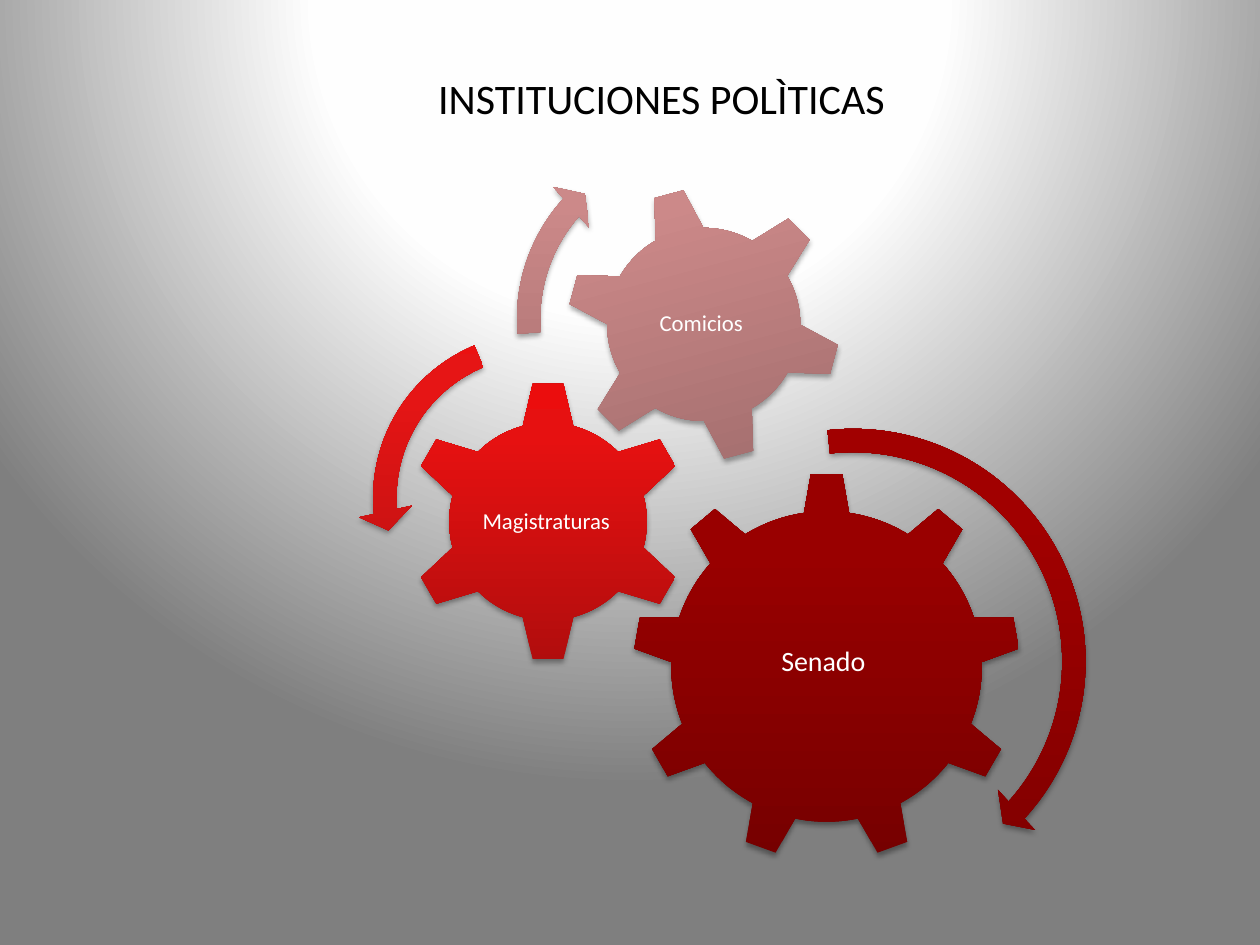
from lxml import etree
from pptx import Presentation, util as u
from pptx.dml.color import RGBColor
from pptx.enum import shapes, text
from pptx.oxml.ns import qn

MSO = shapes.MSO_SHAPE
FONT = "Calibri"

# Gear: preset, box, rotation, gradient from bottom to top, label, label box, text size
GEARS = [
    (MSO.GEAR_9, (5.02, 3.75, 3.08, 3.08), 0, ("760000", "990000", "9A0000"),
     "Senado ", (5.64, 4.47, 1.84, 1.58), 16),
    (MSO.GEAR_6, (3.23, 3.02, 2.24, 2.24), 0, ("B10D0D", "E61111", "EB0D0D"),
     "Magistraturas ", (3.8, 3.59, 1.11, 1.1), 13),
    (MSO.GEAR_6, (4.49, 1.48, 2.19, 2.19), 345, ("9D6A6A", "CC8989", "CE8989"),
     "Comicios ", (4.97, 1.96, 1.23, 1.23), 13),
]

# Turning arrow: preset, left, top, side, gradient, adjustments
ARROWS = [
    (MSO.CIRCULAR_ARROW, 4.8, 3.28, 3.94, ("7C0000", "A10000", "A20000"),
     (0.047, 2.99, 25.345, 158.224, 0.055)),
    (MSO.LEFT_CIRCULAR_ARROW, 2.84, 2.52, 2.86, ("B11010", "E61515", "EB1111"),
     (0.065, 4.3, 104.891, 148.378, 0.075)),
    (MSO.CIRCULAR_ARROW, 3.98, 0.99, 3.08, ("9D6969", "CC8989", "CE8888"),
     (0.06, 3.941, 133.138, 105.082, 0.07)),
]


def add_xml(parent, tag, **attrs):
    child = etree.SubElement(parent, qn(tag))
    for name, value in attrs.items():
        child.set(name, str(value))
    return child


def set_gradient(owner, fill, stops):
    """Fill with (percent, colour) stops and return the emptied gradient element."""
    fill.gradient()
    grad = owner.find(".//" + qn("a:gradFill"))
    for child in list(grad):
        grad.remove(child)
    stop_list = add_xml(grad, "a:gsLst")
    for percent, colour in stops:
        stop = add_xml(stop_list, "a:gs", pos=percent * 1000)
        add_xml(stop, "a:srgbClr", val=colour)
    return grad


def set_background(slide):
    grad = set_gradient(slide._element, slide.background.fill,
                        [(0, "FFFFFF"), (40, "FEFEFE"), (100, "7F7F7F")])
    circle = add_xml(grad, "a:path", path="circle")
    add_xml(circle, "a:fillToRect", l=50000, t=-80000, r=50000, b=180000)


def set_text(sp, words, size, colour, **frame):
    tf = sp.text_frame
    settings = {"word_wrap": True, "vertical_anchor": text.MSO_ANCHOR.MIDDLE, **frame}
    for name, value in settings.items():
        setattr(tf, name, value)
    p = tf.paragraphs[0]
    p.alignment = text.PP_ALIGN.CENTER
    r = p.add_run()
    r.text = words
    for name, value in {"name": FONT, "size": u.Pt(size)}.items():
        setattr(r.font, name, value)
    r.font.color.rgb = RGBColor.from_string(colour)
    return p


def add_part(slide, preset, box, colours):
    """Add a shape with a vertical gradient and a soft shadow below it."""
    sp = slide.shapes.add_shape(preset, *map(u.Inches, box))
    grad = set_gradient(sp._element, sp.fill, zip((0, 80, 100), colours))
    add_xml(grad, "a:lin", ang=270 * 60000, scaled=0)
    sp.line.fill.background()
    sp.shadow.inherit = False
    effects = sp._element.spPr.find(qn("a:effectLst"))
    shadow = add_xml(effects, "a:outerShdw", blurRad=u.Pt(3.1), dist=u.Pt(1.8),
                     dir=90 * 60000, rotWithShape=0)
    add_xml(add_xml(shadow, "a:srgbClr", val="000000"), "a:alpha", val=35000)
    return sp


def add_gear(slide, preset, box, rotation, colours, label, label_box, size):
    add_part(slide, preset, box, colours).rotation = rotation
    sp = slide.shapes.add_textbox(*map(u.Inches, label_box))
    sides = ("left", "right", "top", "bottom")
    margins = {f"margin_{side}": u.Inches(0.02) for side in sides}
    set_text(sp, label, size, "FFFFFF", **margins).line_spacing = 0.9


def add_arrow(slide, preset, left, top, side, colours, adjustments):
    sp = add_part(slide, preset, (left, top, side, side), colours)
    for i, value in enumerate(adjustments):
        sp.adjustments[i] = value


def main():
    prs = Presentation()
    prs.slide_width, prs.slide_height = u.Inches(10), u.Inches(7.5)
    slide = prs.slides.add_slide(prs.slide_layouts[5])
    set_background(slide)

    # Title
    title = slide.shapes.title
    for name, value in zip(("left", "top", "width", "height"), (1, 0.3, 8.5, 0.95)):
        setattr(title, name, u.Inches(value))
    set_text(title, "INSTITUCIONES POLÌTICAS", 24, "000000")

    # Gears, then the arrows around them
    for gear in GEARS:
        add_gear(slide, *gear)
    for arrow in ARROWS:
        add_arrow(slide, *arrow)

    prs.save("out.pptx")


if __name__ == "__main__":
    main()
